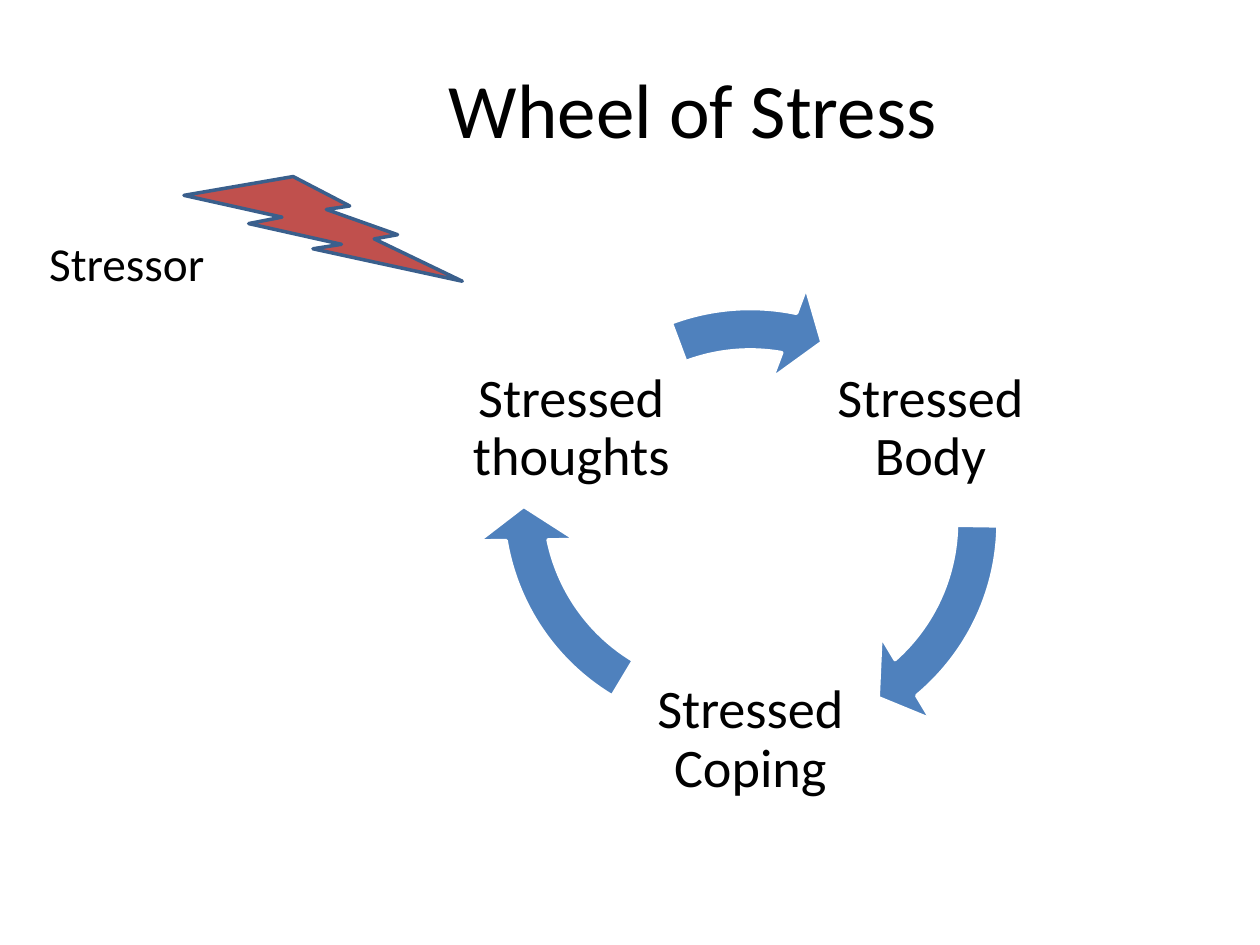
"""Build the Wheel of Stress slide."""
from pptx import Presentation, util as u
from pptx.dml.color import RGBColor
from pptx.enum import shapes, text

FONT, INK, BLUE, RED, EDGE, WHITE = "Calibri", "000000", "4F81BD", "C0504D", "3A5F8C", "FFFFFF"
SIDE, RING, PAD = 4.29, 10.19, 0.1
TITLE = ("Wheel of Stress", (2.54, 0.58, 22.86, 3.18))
CAUSE = ("Stressor", (0.74, 4.6, 8, 2.57))
BOLT = (3.71, 3.56, 5.61, 2.11)
STAGES = [
    ("Stressed Body", (16.61, 6.5), (10.49, 5.44), (29.65, 0.51)),
    ("Stressed Coping", (12.98, 12.78), (9.58, 5.05), (101.73, 72.59)),
    ("Stressed thoughts", (9.37, 6.5), (10.03, 5.66), (168.58, 149.66)),
]


def tint(code):
    return RGBColor.from_string(code)


def label(slide, words, box, size, align, anchor):
    frame = slide.shapes.add_textbox(*map(u.Cm, box)).text_frame
    frame.word_wrap = True
    frame.vertical_anchor = anchor
    para = frame.paragraphs[0]
    para.text, para.alignment = words, align
    para.font.name, para.font.size = FONT, u.Pt(size)
    para.font.color.rgb = tint(INK)
    return frame


def draw(slide, kind, box, fill, line):
    shape = slide.shapes.add_shape(kind, *map(u.Cm, box))
    shape.shadow.inherit = False
    shape.fill.solid()
    shape.fill.fore_color.rgb = tint(fill)
    shape.line.color.rgb = tint(line)
    shape.line.width = u.Pt(2)
    return shape


def main():
    deck = Presentation()
    deck.slide_width, deck.slide_height = u.Cm(25.4), u.Cm(19.05)
    slide = deck.slides.add_slide(deck.slide_layouts[6])
    kinds, align, anchor = shapes.MSO_SHAPE, text.PP_ALIGN, text.MSO_ANCHOR

    label(slide, *TITLE, 44, align.CENTER, anchor.MIDDLE)
    for words, spot, ring, (end, start) in STAGES:
        frame = label(slide, words, (*spot, SIDE, SIDE), 31, align.CENTER, anchor.MIDDLE)
        frame.margin_left = frame.margin_right = u.Cm(PAD)
        frame.margin_top = frame.margin_bottom = u.Cm(PAD)
        frame.paragraphs[0].line_spacing = 0.9
        arrow = draw(slide, kinds.CIRCULAR_ARROW, (*ring, RING, RING), BLUE, WHITE)
        for i, value in enumerate((0.082, 5.76, end, start, 0.096)):
            arrow.adjustments[i] = value
    draw(slide, kinds.LIGHTNING_BOLT, BOLT, RED, EDGE)
    label(slide, *CAUSE, 27, align.LEFT, anchor.TOP)
    deck.save("out.pptx")


if __name__ == "__main__":
    main()
